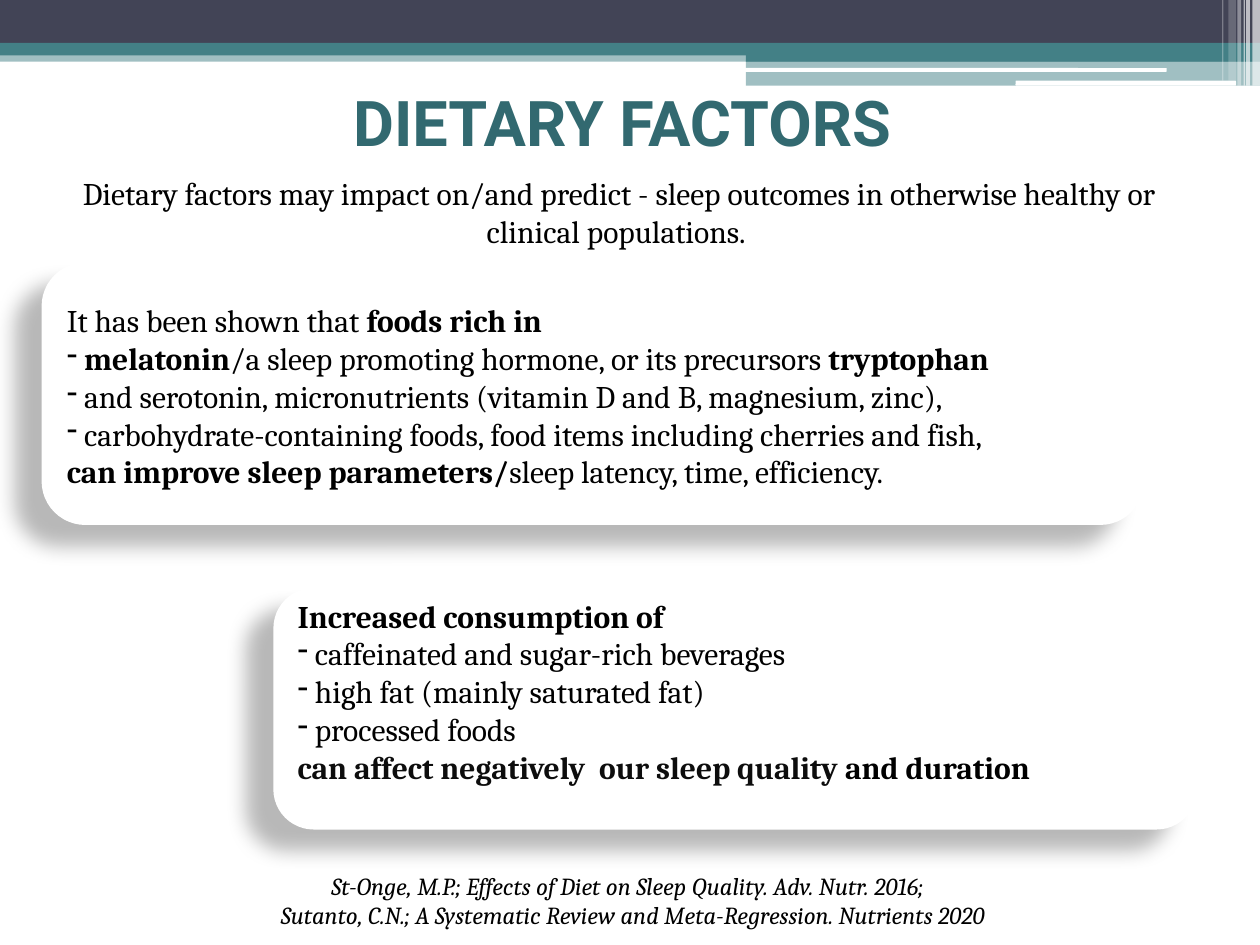
from lxml import etree
from pptx import Presentation
from pptx.dml.color import RGBColor
from pptx.enum.shapes import MSO_SHAPE
from pptx.enum.text import MSO_ANCHOR, PP_ALIGN
from pptx.oxml import parse_xml
from pptx.oxml.ns import nsdecls, qn
from pptx.util import Inches, Pt

RECT, ROUND = MSO_SHAPE.RECTANGLE, MSO_SHAPE.ROUNDED_RECTANGLE
TOP, MIDDLE = MSO_ANCHOR.TOP, MSO_ANCHOR.MIDDLE
CENTER, JUSTIFY = PP_ALIGN.CENTER, PP_ALIGN.JUSTIFY
WIDTH, HEIGHT = Inches(10), Inches(7.5)

WHITE = RGBColor(0xFF, 0xFF, 0xFF)
BLACK = RGBColor(0x00, 0x00, 0x00)
SOFT_BLACK = RGBColor(0x0D, 0x0D, 0x0D)
SLATE = RGBColor(0x42, 0x44, 0x56)
TEAL = RGBColor(0x43, 0x80, 0x86)
DEEP_TEAL = RGBColor(0x32, 0x69, 0x70)

BANDS = [
    (RECT, (0, 5.33, 100, 1.2), TEAL, 50),
    (RECT, (0, 0, 100, 4.53), SLATE, 100),
    (RECT, (0, 4.53, 100, 1.33), TEAL, 100),
    (RECT, (59.2, 5.2, 40.8, 1.33), TEAL, 100),
    (RECT, (59.2, 6.4, 40.8, 2.67), TEAL, 50),
    (ROUND, (59.1, 7.2, 33.5, 0.4), WHITE, 100),
    (ROUND, (80.6, 8.53, 17.5, 0.53), WHITE, 100),
]
STRIPES = [
    (99.4, 0.6, 9.07, 65),
    (98.9, 0.3, 9.07, 65),
    (98.7, 0.1, 9.07, 60),
    (98.2, 0.3, 9.07, 40),
    (97.5, 0.6, 8.53, 20),
    (97, 0.1, 8.53, 30),
]
HELPFUL = [
    "It has been shown that **foods rich in **",
    "-** melatonin**/a sleep promoting hormone, or its precursors **tryptophan **",
    "- and serotonin, micronutrients (vitamin D and B, magnesium, zinc), ",
    "- carbohydrate-containing foods, food items including cherries and fish, ",
    "**can improve sleep parameters/**sleep latency, time, efficiency. ",
]
HARMFUL = [
    "**Increased consumption of**",
    "- caffeinated and sugar-rich beverages",
    "- high fat (mainly saturated fat)  ",
    "- processed foods ",
    "**can affect negatively  our sleep quality ****and duration**",
]
CITATIONS = [
    "St-Onge, M.P.; Effects of Diet on Sleep Quality. Adv. Nutr. 2016; ",
    " Sutanto, C.N.; A Systematic Review and Meta-Regression. Nutrients 2020",
]


def place(x, y, w, h):
    """Turn percentages of the slide's size into lengths."""
    return [round(share * side / 100)
            for share, side in zip((x, y, w, h), (WIDTH, HEIGHT) * 2)]


def add_block(s, kind, box, color, opacity=100):
    """Add a plain filled shape without line or shadow."""
    sp = s.shapes.add_shape(kind, *place(*box))
    sp.shadow.inherit = False
    sp.fill.solid()
    sp.fill.fore_color.rgb = color
    sp.line.fill.background()
    if opacity < 100:
        clr = sp.fill._xPr.find(".//" + qn("a:srgbClr"))
        etree.SubElement(clr, qn("a:alpha"), val=str(opacity * 1000))
    return sp


def style(r, size, color=BLACK, font="Cambria", bold=False, italic=False):
    """Set the font of a run."""
    r.font.name, r.font.size = font, Pt(size)
    r.font.bold, r.font.italic = bold, italic
    r.font.color.rgb = color


def add_label(s, box, lines, size, anchor=TOP, **font):
    """Add a centred text box with one paragraph per line."""
    tf = s.shapes.add_textbox(*place(*box)).text_frame
    tf.word_wrap = True
    tf.vertical_anchor = anchor
    tf.text = "\n".join(lines)
    for p in tf.paragraphs:
        p.alignment = CENTER
        for r in p.runs:
            style(r, size, **font)


def add_shadow(sp):
    """Give a shape a soft shadow towards its lower left."""
    sp._element.spPr.remove(sp._element.spPr.find(qn("a:effectLst")))
    sp._element.spPr.append(parse_xml(
        f'<a:effectLst {nsdecls("a")}>'
        f'<a:outerShdw blurRad="{Pt(11.8)}" dist="{Pt(19.7)}" '
        f'dir="{141 * 60000}" algn="tl" rotWithShape="0">'
        '<a:srgbClr val="000000"><a:alpha val="28000"/></a:srgbClr>'
        '</a:outerShdw></a:effectLst>'))


def fill_paragraph(p, line):
    """Write a line whose leading dash is a bullet and ** marks bold."""
    p.alignment = JUSTIFY
    if line.startswith("-"):
        line = line[1:]
        pPr = p._p.get_or_add_pPr()
        pPr.set("marL", "0")
        pPr.set("indent", "0")
        etree.SubElement(pPr, qn("a:buChar"), char="-")
    for i, part in enumerate(line.split("**")):
        if part:
            r = p.add_run()
            r.text = part
            style(r, 18, bold=i % 2 == 1)


def add_card(s, box, lines, top=0.05, bottom=0.05):
    """Add a white rounded card with a shadow and return its paragraphs."""
    sp = add_block(s, ROUND, box, WHITE)
    add_shadow(sp)
    tf = sp.text_frame
    tf.word_wrap = True
    tf.vertical_anchor = MIDDLE
    tf.margin_top, tf.margin_bottom = Inches(top), Inches(bottom)
    for i, line in enumerate(lines):
        fill_paragraph(tf.add_paragraph() if i else tf.paragraphs[0], line)
    return tf.paragraphs


def main():
    """Build the slide and save it."""
    prs = Presentation()
    prs.slide_width, prs.slide_height = WIDTH, HEIGHT
    s = prs.slides.add_slide(prs.slide_layouts[6])
    for band in BANDS:
        add_block(s, *band)
    for x, w, h, opacity in STRIPES:
        add_block(s, RECT, (x, 0, w, h), WHITE, opacity)
    add_label(s, (2.5, 8.93, 95, 7.73), ["DIETARY FACTORS "], 36, MIDDLE,
              color=DEEP_TEAL, font="Roboto", bold=True)
    add_label(s, (1.7, 91.47, 96.7, 7.6), CITATIONS, 14, italic=True)
    add_label(s, (3.3, 17.78, 91.7, 9.47),
              ["Dietary factors may impact on/and predict - sleep outcomes "
               "in otherwise healthy or clinical populations. "], 18)
    add_card(s, (3.3, 27.78, 87.5, 27.78), HELPFUL, top=0.08)
    harmful = add_card(s, (21.7, 62.22, 73.3, 25.56), HARMFUL, bottom=0.33)
    harmful[-1].runs[0].font.color.rgb = SOFT_BLACK
    prs.save("out.pptx")


if __name__ == "__main__":
    main()
